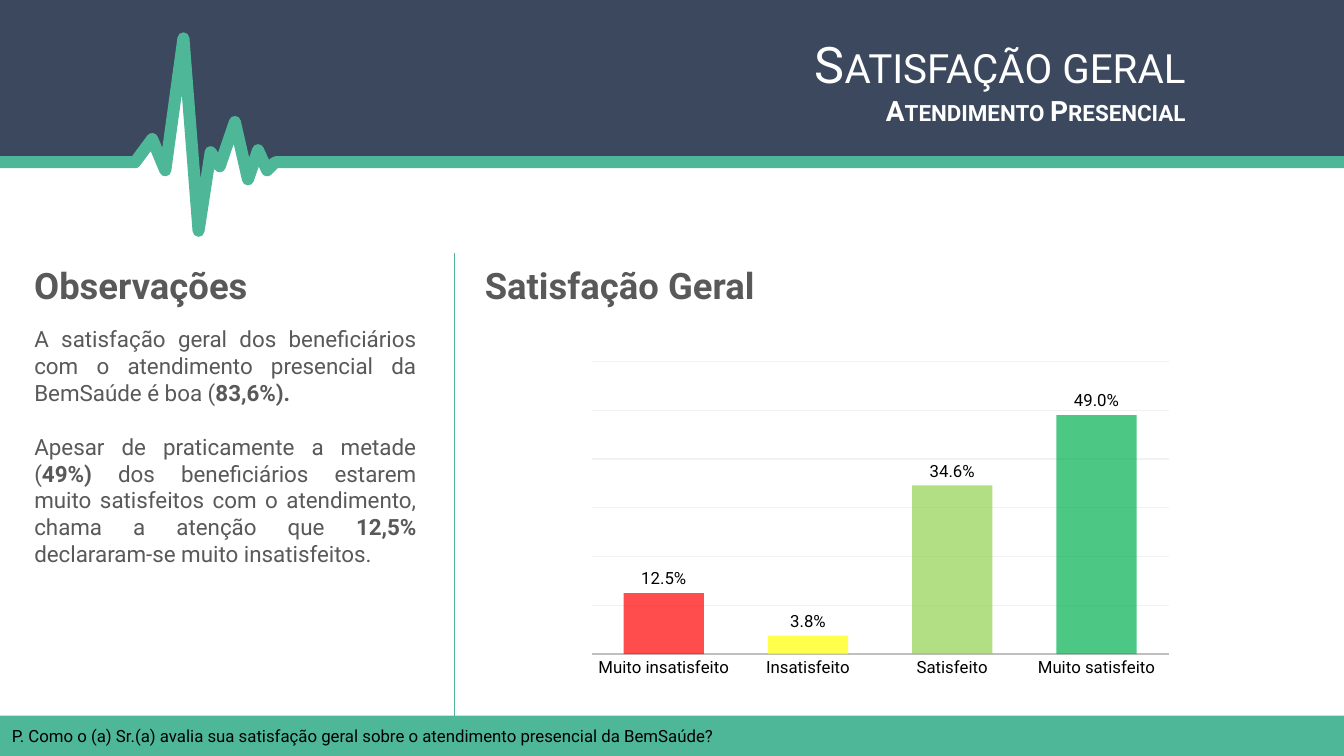
from lxml import etree
from pptx import Presentation
from pptx.chart.data import CategoryChartData
from pptx.dml.color import RGBColor
from pptx.enum.chart import XL_CHART_TYPE as ChartType, XL_LABEL_POSITION as LabelPosition
from pptx.enum.chart import XL_TICK_MARK as TickMark
from pptx.enum.shapes import MSO_CONNECTOR as Connector, MSO_SHAPE as Preset
from pptx.enum.text import MSO_ANCHOR as Anchor, MSO_AUTO_SIZE as AutoSize, PP_ALIGN as Align
from pptx.oxml import parse_xml
from pptx.oxml.ns import nsdecls, qn
from pptx.util import Inches, Pt

SLIDE_WIDTH, SLIDE_HEIGHT = 13.33, 7.5
FOOTER_HEIGHT = 0.4
LEFT_COLUMN, RIGHT_COLUMN = 0.24, 4.71
HEADING_TOP = 2.56
NAVY, GREEN, GREY = "3B485D", "4EB798", "595959"
WHITE, BLACK = "FFFFFF", "000000"
FONT = "Roboto"

# The heartbeat: x of each turn, and how far it rises above (+) or dips below (-) the baseline
BASELINE = 1.61
HEARTBEAT = [
    (1.34, 0), (1.51, 0.23), (1.64, -0.08), (1.82, 1.23), (1.97, -0.68), (2.09, 0.1),
    (2.18, -0.04), (2.33, 0.4), (2.46, -0.17), (2.56, 0.12), (2.65, -0.08), (2.73, 0),
]
TITLE_LINES = [("Satisfação geral", 36, False), ("Atendimento Presencial", 20, True)]
QUESTION = "P. Como o (a) Sr.(a) avalia sua satisfação geral sobre o atendimento presencial da BemSaúde?"
OBSERVATIONS = [
    [("A satisfação geral dos beneficiários com o atendimento presencial da BemSaúde é boa (", False),
     ("83,6%).", True)],
    [("Apesar de praticamente a metade (", False), ("49%) ", True),
     ("dos beneficiários estarem muito satisfeitos com o atendimento, chama a atenção que ", False),
     ("12,5% ", True), ("declararam-se muito insatisfeitos.", False)],
]
SATISFACTION = [
    ("Muito insatisfeito", 0.125, "FF0000"),
    ("Insatisfeito", 0.038, "FFFF00"),
    ("Satisfeito", 0.346, "92D050"),
    ("Muito satisfeito", 0.49, "00B050"),
]
PLOT_LAYOUT = {"x": 0.023, "y": 0.057, "w": 0.949, "h": 0.847}


def color(hex_value):
    return RGBColor.from_string(hex_value)


def set_format(target, values):
    for name, value in values.items():
        setattr(target, name, value)


def set_font(font, size, hex_value, bold=False):
    set_format(font, {"name": FONT, "size": Pt(size), "bold": bold})
    font.color.rgb = color(hex_value)


def set_line(line, hex_value, width):
    line.color.rgb = color(hex_value)
    line.width = Pt(width)


def fill_plain(shape, hex_value):
    shape.fill.solid()
    shape.fill.fore_color.rgb = color(hex_value)
    shape.line.fill.background()
    shape.shadow.inherit = False


def place(shape, *box):
    """Puts a text shape at left, top, width, height in inches."""
    set_format(shape, dict(zip(("left", "top", "width", "height"), map(Inches, box))))
    set_format(shape.text_frame, {"word_wrap": True, "auto_size": AutoSize.NONE,
                                  "vertical_anchor": Anchor.TOP})


def format_paragraph(paragraph, alignment, space_before=0):
    set_format(paragraph, {"alignment": alignment, "line_spacing": 1.0,
                           "space_before": Pt(space_before)})


def add_run(paragraph, text, size, hex_value, bold=False):
    run = paragraph.add_run()
    run.text = text
    set_font(run.font, size, hex_value, bold)
    return run


def add_outline(slide, points, close):
    (start, *others) = [(100 * x, 100 * y) for x, y in points]
    builder = slide.shapes.build_freeform(*start, scale=Inches(0.01))
    builder.add_line_segments(others, close=close)
    return builder.convert_to_shape()


def add_heartbeat_banner(slide):
    """Draws the banner, whose lower edge is the heartbeat, and the green stroke along that edge."""
    edge = [(x, BASELINE - rise) for x, rise in [(0, 0), *HEARTBEAT, (SLIDE_WIDTH, 0)]]
    banner = add_outline(slide, [(0, 0), *edge, (SLIDE_WIDTH, 0)], close=True)
    fill_plain(banner, NAVY)

    pulse = add_outline(slide, edge, close=False)
    pulse.fill.background()
    pulse.shadow.inherit = False
    set_line(pulse.line, GREEN, 8.6)
    etree.SubElement(pulse.line._get_or_add_ln(), qn("a:round"))


def add_label(slide, text, box, size, hex_value, bold=False):
    shape = slide.shapes.add_textbox(0, 0, 0, 0)
    place(shape, *box)
    add_run(shape.text_frame.paragraphs[0], text, size, hex_value, bold)


def add_footer(slide):
    top = SLIDE_HEIGHT - FOOTER_HEIGHT
    bar = slide.shapes.add_shape(Preset.RECTANGLE, 0, Inches(top),
                                 Inches(SLIDE_WIDTH), Inches(FOOTER_HEIGHT))
    fill_plain(bar, GREEN)
    add_label(slide, QUESTION, (0.02, top + 0.05, 9.02, 0.3), 12, BLACK)


def add_divider(slide, x, top, bottom):
    divider = slide.shapes.add_connector(Connector.STRAIGHT, *map(Inches, (x, top, x, bottom)))
    set_line(divider.line, GREEN, 1)
    etree.SubElement(divider._element.spPr, qn("a:effectLst"))


def paragraphs_for(frame, items):
    """Pairs each item with its own paragraph, the first with the one already there."""
    for index, item in enumerate(items):
        yield (frame.add_paragraph() if index else frame.paragraphs[0]), item


def write_title(slide):
    title = slide.shapes.title
    place(title, 2.46, 0.28, 9.4, 1.04)
    for paragraph, (text, size, bold) in paragraphs_for(title.text_frame, TITLE_LINES):
        format_paragraph(paragraph, Align.RIGHT)
        run = add_run(paragraph, text, size, WHITE, bold)
        run.font._element.set("cap", "small")
    # Bring the title in front of the banner
    title._element.getparent().append(title._element)


def write_observations(slide):
    body = slide.placeholders[1]
    place(body, LEFT_COLUMN, 3.18, 3.99, 2.26)
    for paragraph, pieces in paragraphs_for(body.text_frame, OBSERVATIONS):
        properties = paragraph._p.get_or_add_pPr()
        for indent in ("marL", "indent"):
            properties.set(indent, "0")
        etree.SubElement(properties, qn("a:buNone"))
        format_paragraph(paragraph, Align.JUSTIFY, 0 if pieces is OBSERVATIONS[0] else 19)
        for text, bold in pieces:
            add_run(paragraph, text, 16, GREY, bold)


def set_plot_layout(chart, layout):
    plot_area = chart._chartSpace.chart.plotArea
    for old in plot_area.findall(qn("c:layout")):
        plot_area.remove(old)
    sizes = "".join(f'<c:{tag} val="{value}"/>' for tag, value in layout.items())
    plot_area.insert(0, parse_xml(
        f'<c:layout {nsdecls("c")}><c:manualLayout><c:layoutTarget val="inner"/>'
        f'<c:xMode val="edge"/><c:yMode val="edge"/>{sizes}</c:manualLayout></c:layout>'))


def color_bars(series, bar_colors, opacity):
    for index, bar_color in enumerate(bar_colors):
        fill = series.points[index].format.fill
        fill.solid()
        fill.fore_color.rgb = color(bar_color)
        tint = fill._xPr.find(".//" + qn("a:srgbClr"))
        etree.SubElement(tint, qn("a:alpha"), val=str(opacity * 1000))


def add_satisfaction_chart(slide):
    names, values, bar_colors = zip(*SATISFACTION)
    data = CategoryChartData(number_format="0.0%")
    data.categories = names
    data.add_series("Series 1", values)
    box = map(Inches, (5.73, 3.39, 6.03, 3.43))
    chart = slide.shapes.add_chart(ChartType.COLUMN_CLUSTERED, *box, data).chart
    set_format(chart, {"has_legend": False, "has_title": False})
    set_font(chart.font, 10, BLACK)
    set_plot_layout(chart, PLOT_LAYOUT)

    category_axis, value_axis = chart.category_axis, chart.value_axis
    category_axis.major_tick_mark = TickMark.NONE
    set_font(category_axis.tick_labels.font, 12, BLACK)
    set_line(category_axis.format.line, "BFBFBF", 1.25)
    set_format(value_axis, {"visible": False, "has_major_gridlines": True, "minimum_scale": 0,
                            "maximum_scale": 0.6, "major_unit": 0.1})
    set_line(value_axis.major_gridlines.format.line, "F2F2F2", 0.75)

    plot = chart.plots[0]
    set_format(plot, {"gap_width": 80, "overlap": 25, "vary_by_categories": False,
                      "has_data_labels": True})
    set_format(plot.data_labels, {"show_value": True, "number_format": "0.0%",
                                  "number_format_is_linked": False,
                                  "position": LabelPosition.OUTSIDE_END})
    set_font(plot.data_labels.font, 12, BLACK)
    color_bars(plot.series[0], bar_colors, opacity=70)


def main():
    presentation = Presentation()
    set_format(presentation, {"slide_width": Inches(SLIDE_WIDTH), "slide_height": Inches(SLIDE_HEIGHT)})
    slide = presentation.slides.add_slide(presentation.slide_layouts[1])
    add_heartbeat_banner(slide)
    write_title(slide)
    add_footer(slide)
    for heading, left in (("Observações", LEFT_COLUMN), ("Satisfação Geral", RIGHT_COLUMN)):
        add_label(slide, heading, (left, HEADING_TOP, 4.19, 0.54), 26, GREY, bold=True)
    write_observations(slide)
    add_divider(slide, 4.51, 2.51, SLIDE_HEIGHT - FOOTER_HEIGHT)
    add_satisfaction_chart(slide)
    presentation.save("out.pptx")


if __name__ == "__main__":
    main()
